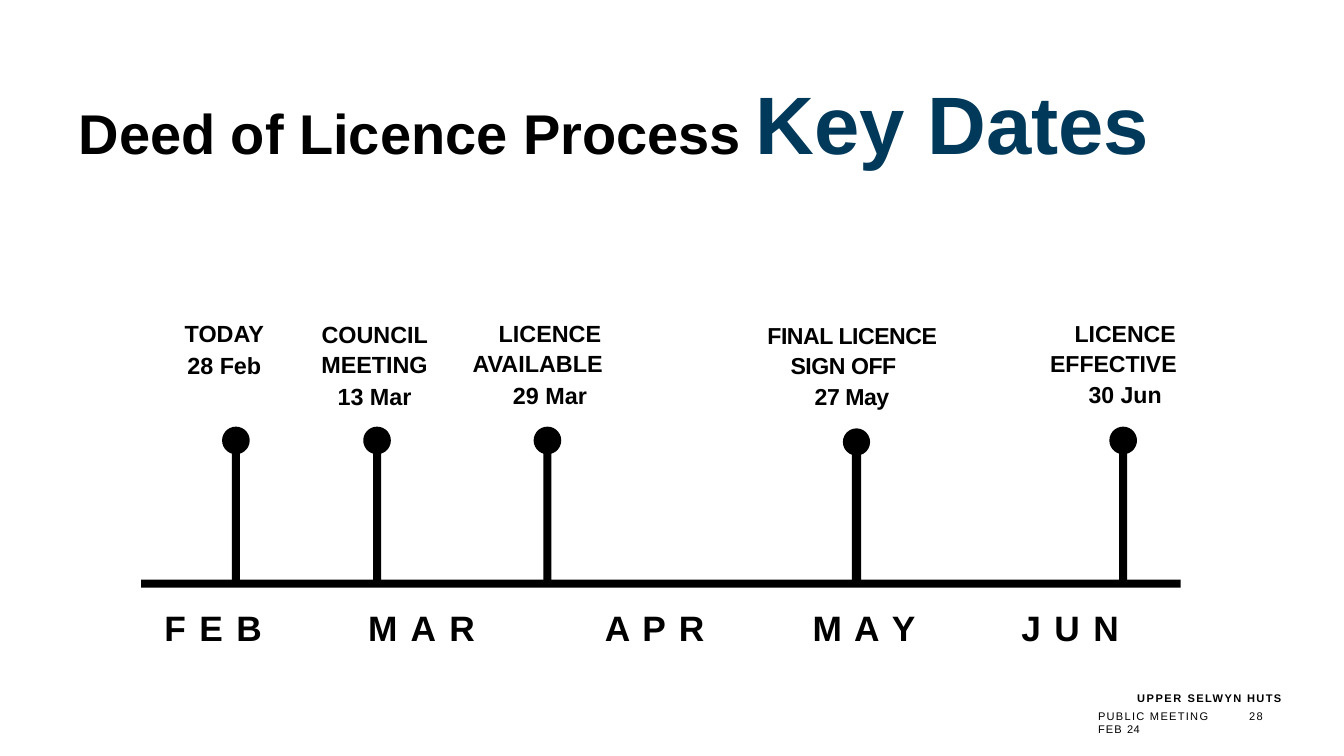
from math import cos, pi, sin

from pptx import Presentation
from pptx.dml.color import RGBColor
from pptx.enum.shapes import MSO_SHAPE
from pptx.enum.text import MSO_AUTO_SIZE, PP_ALIGN
from pptx.oxml.ns import qn
from pptx.util import Inches, Pt
from lxml import etree

RECT, OVAL = MSO_SHAPE.RECTANGLE, MSO_SHAPE.OVAL
LEFT, MID, RIGHT = PP_ALIGN.LEFT, PP_ALIGN.CENTER, PP_ALIGN.RIGHT
FIT = MSO_AUTO_SIZE.SHAPE_TO_FIT_TEXT
BLACK, NAVY = "000000", "003959"

# Content: runs are (text, size, bold, colour, letter spacing)
TITLE = [("Deed of Licence ", 40, True, BLACK, 0),
         ("Process ", 40, True, BLACK, -0.1),
         ("Key ", 58.2, True, NAVY, 0),
         ("Dates", 58.2, True, NAVY, -0.1)]
FOOT = [[("UPPER ", 7.9, True, BLACK, 1.1),
         ("SELWYN ", 7.9, True, BLACK, 1),
         ("HUTS ", 7.9, True, BLACK, 0.9)],
        [("PUBLIC MEETING\t", 7.9, False, BLACK, 0.9),
         ("28 ", 7.9, False, BLACK, 0.8),
         ("FEB ", 7.9, False, BLACK, 0.8),
         ("24", 7.9, False, BLACK, 0.3)]]
# (month, left, width, letter spacing)
MONTHS = [("F E B", 1.62, 0.99, 1.3), ("M A R", 3.64, 1.08, 1.7),
          ("A P R", 5.99, 1.03, 1.3), ("M A Y", 8.05, 1.03, 1.3),
          ("J U N", 10.12, 0.99, 1.3)]
# (label, date, box, size, letter spacing, first indent, line spacing,
#  space before, top inset)
EVENTS = [
    ("TODAY", "28 Feb", (1.73, 3.14, 0.98, 0.62),
     16.7, 0, 0, None, 2.5, 0.03),
    ("COUNCIL MEETING", "13 Mar", (3.04, 3.14, 1.34, 0.92),
     16.7, 0, 0, 1.09, 0.6, 0.01),
    ("LICENCE AVAILABLE ", "29 Mar", (4.53, 3.13, 1.66, 0.92),
     16.7, 0, 0.18, 1.09, 0.6, 0.01),
    ("FINAL LICENCE SIGN OFF", "27 May", (7.19, 3.15, 2.34, 0.91),
     16.5, -0.3, 0.17, 1.09, 0.6, 0.01),
    ("LICENCE EFFECTIVE ", "30 Jun", (10.25, 3.13, 1.64, 0.91),
     16.5, 0, 0.17, 1.09, 0.6, 0.01),
]
PINS = [2.34, 3.74, 5.43, 11.14]
MAY_STEM, MAY_DOT = (8.45, 4.44, 0.09, 1.33), (8.36, 4.25, 0.27, 0.27)
AXIS = (1.4, 5.75, 10.31, 0.08)
STEM, TOP, BASE = 0.04, 4.38, 5.78
RADIUS, DOT_Y, SIDES = 0.137, 4.37, 28

prs = Presentation()
prs.slide_width, prs.slide_height = Inches(13.33), Inches(7.5)
slide = prs.slides.add_slide(prs.slide_layouts[6])


def color(code):
    return RGBColor.from_string(code)


def paint(shape):
    shape.shadow.inherit = False
    shape.fill.solid()
    shape.fill.fore_color.rgb = color(BLACK)
    shape.line.fill.background()


def solid(kind, box):
    paint(slide.shapes.add_shape(kind, *map(Inches, box)))


def outline(rings):
    rings = [[(Inches(x), Inches(y)) for x, y in ring] for ring in rings]
    pen = slide.shapes.build_freeform(*rings[0][0])
    for i, ring in enumerate(rings):
        if i:
            pen.move_to(*ring[0])
        pen.add_line_segments(ring[1:], close=True)
    paint(pen.convert_to_shape())


def fill_para(para, runs, align, before, lines, first):
    para.alignment = align
    para.space_before = Pt(before)
    if lines is not None:
        para.line_spacing = lines
    props = para._p.get_or_add_pPr()
    props.set("marL", str(Inches(0.01)))
    props.set("indent", str(Inches(first)))
    for text, size, bold, code, gap in runs:
        run = para.add_run()
        run.text = text
        font = run.font
        font.name, font.size, font.bold = "Arial", Pt(size), bold
        font.color.rgb = color(code)
        run._r.get_or_add_rPr().set("spc", str(round(gap * 100)))


def add_text(box, paras, align=LEFT, before=0, lines=None, first=0,
             top=0.0, wrap=True):
    frame = slide.shapes.add_textbox(*map(Inches, box)).text_frame
    frame.word_wrap, frame.auto_size = wrap, FIT
    frame.margin_left = frame.margin_right = frame.margin_bottom = 0
    frame.margin_top = Inches(top)
    for i, runs in enumerate(paras):
        para = frame.add_paragraph() if i else frame.paragraphs[0]
        fill_para(para, runs, align, before, lines, first)
    return frame


# Title
add_text((0.77, 0.72, 11.19, 0.98), [TITLE], before=6.2,
         lines=Pt(63.9), top=0.09)

# Months
for name, left, width, gap in MONTHS:
    add_text((left, 6, width, 0.43),
             [[(name[:-1], 25.2, True, BLACK, gap),
               (name[-1], 25.2, True, BLACK, -0.3)]],
             before=0.7, top=0.01, wrap=False)

# Pins and axis
outline([[(x + STEM, TOP), (x - STEM, TOP), (x - STEM, BASE), (x + STEM, BASE)]
         for x in PINS])
turns = [2 * pi * i / SIDES for i in range(SIDES)]
outline([[(x + RADIUS * cos(t), DOT_Y - RADIUS * sin(t)) for t in turns]
         for x in PINS])
solid(RECT, AXIS)
solid(RECT, MAY_STEM)
solid(OVAL, MAY_DOT)

# Events
for label, date, box, size, gap, first, lines, before, top in EVENTS:
    paras = [[(text, size, True, BLACK, gap)] for text in (label, date)]
    add_text(box, paras, MID, before, lines, first, top)

# Footer: the tab sets the date apart from the meeting
foot = add_text((10.87, 6.86, 1.88, 0.31), FOOT, RIGHT)
head, last = foot.paragraphs
head.line_spacing = Pt(9.4)
last.alignment, last.space_before = LEFT, Pt(3.5)
props = last._p.get_or_add_pPr()
props.set("marL", str(Inches(0.02)))
tabs = etree.SubElement(props, qn("a:tabLst"))
etree.SubElement(tabs, qn("a:tab"), pos=str(Inches(1.23)), algn="l")

prs.save("out.pptx")
